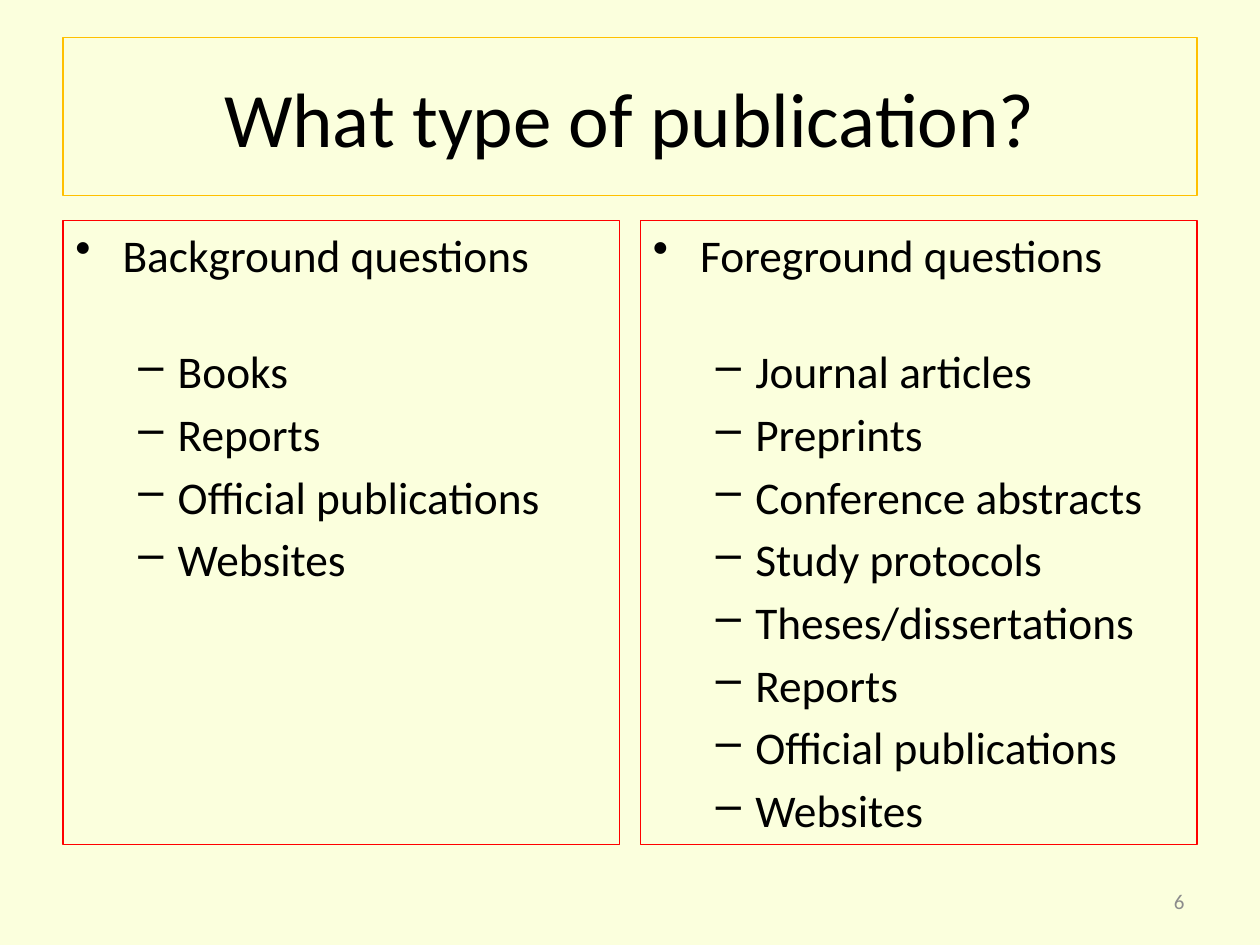
"""Build a slide that pairs question types with suitable publication types."""
from lxml.etree import SubElement
from pptx import Presentation
from pptx.dml.color import RGBColor
from pptx.enum.text import MSO_ANCHOR, MSO_AUTO_SIZE, PP_ALIGN
from pptx.oxml.ns import qn
from pptx.util import Pt

CREAM = RGBColor(0xFB, 0xFF, 0xDD)
AMBER = RGBColor(0xFF, 0xC0, 0x00)
RED = RGBColor(0xFF, 0x00, 0x00)
BLACK = RGBColor(0x00, 0x00, 0x00)
GREY = RGBColor(0x8C, 0x8C, 0x8C)

MARGIN = 36
CONTENT_WIDTH = 648
COLUMN_GAP = 12
COLUMN_WIDTH = (CONTENT_WIDTH - COLUMN_GAP) / 2

QUESTIONS = {
    "Background questions": [
        "Books", "Reports", "Official publications", "Websites"],
    "Foreground questions": [
        "Journal articles", "Preprints", "Conference abstracts",
        "Study protocols", "Theses/dissertations", "Reports",
        "Official publications", "Websites"],
}


class SlideBuilder:
    font_name = "Calibri"
    list_size = 25.9
    border_width = 0.75

    def __init__(self, presentation):
        self.slide = presentation.slides.add_slide(presentation.slide_layouts[5])
        self.slide.background.fill.solid()
        self.slide.background.fill.fore_color.rgb = CREAM

    def style(self, paragraph, size, color, align=PP_ALIGN.LEFT):
        paragraph.alignment = align
        paragraph.font.name = self.font_name
        paragraph.font.size = Pt(size)
        paragraph.font.color.rgb = color

    def border(self, shape, color):
        shape.line.color.rgb = color
        shape.line.width = Pt(self.border_width)

    def title(self, text, left, top, width, height):
        heading = self.slide.shapes.title
        heading.left, heading.top = Pt(left), Pt(top)
        heading.width, heading.height = Pt(width), Pt(height)
        heading.text_frame.text = text
        heading.text_frame.vertical_anchor = MSO_ANCHOR.MIDDLE
        self.style(heading.text_frame.paragraphs[0], 44, BLACK, PP_ALIGN.CENTER)
        self.border(heading, AMBER)

    def text_box(self, left, top, width, height, anchor):
        box = self.slide.shapes.add_textbox(
            Pt(left), Pt(top), Pt(width), Pt(height))
        box.text_frame.word_wrap = True
        box.text_frame.auto_size = MSO_AUTO_SIZE.NONE
        box.text_frame.vertical_anchor = anchor
        return box

    def bullet(self, paragraph, text, symbol, indent, hanging, before, after=0):
        paragraph.text = text
        paragraph.space_before, paragraph.space_after = Pt(before), Pt(after)
        self.style(paragraph, self.list_size, BLACK)
        properties = paragraph._p.get_or_add_pPr()
        properties.set("marL", str(Pt(indent)))
        properties.set("indent", str(-Pt(hanging)))
        marker = SubElement(properties, qn("a:buChar"))
        marker.set("char", symbol)
        properties.insert_element_before(marker, "a:tabLst", "a:defRPr")

    def question_column(self, question, publications, left, top, width, height):
        column = self.text_box(left, top, width, height, MSO_ANCHOR.TOP)
        self.border(column, RED)
        frame = column.text_frame
        self.bullet(frame.paragraphs[0], question, "•", 27, 27, 1, 31)
        for publication in publications:
            self.bullet(frame.add_paragraph(), publication, "–", 58.5, 22.5, 4.7)
            frame.paragraphs[-1].level = 1

    def page_number(self, number, left, top, width, height):
        box = self.text_box(left, top, width, height, MSO_ANCHOR.MIDDLE)
        box.text_frame.text = number
        self.style(box.text_frame.paragraphs[0], 12, GREY, PP_ALIGN.RIGHT)


def main():
    presentation = Presentation()
    presentation.slide_width, presentation.slide_height = Pt(720), Pt(540)
    builder = SlideBuilder(presentation)
    builder.title("What type of publication?", MARGIN, 21.6, CONTENT_WIDTH, 90)
    for index, (question, publications) in enumerate(QUESTIONS.items()):
        left = MARGIN + index * (COLUMN_WIDTH + COLUMN_GAP)
        builder.question_column(
            question, publications, left, 126, COLUMN_WIDTH, 356.4)
    builder.page_number("6", 516, 500.5, 168, 28.75)
    presentation.save("out.pptx")


if __name__ == "__main__":
    main()
